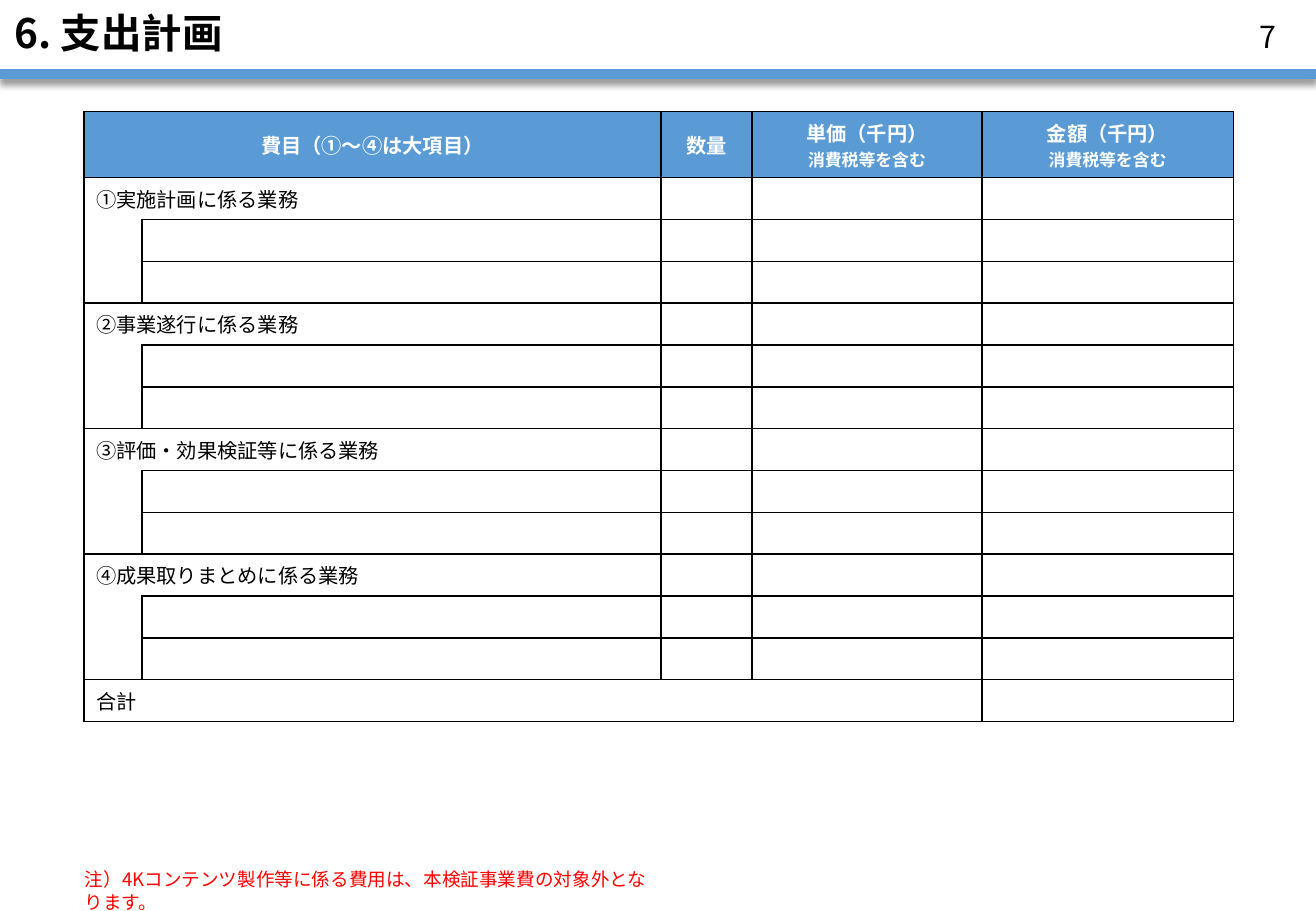
from lxml.etree import SubElement
from pptx import Presentation
from pptx.dml.color import RGBColor
from pptx.enum.shapes import MSO_CONNECTOR, MSO_SHAPE
from pptx.enum.text import MSO_ANCHOR, PP_ALIGN
from pptx.oxml.ns import qn
from pptx.util import Inches, Pt

TITLE = "6. 支出計画"
PAGE = "7"
HEADS = ["費目（①～④は大項目）", "", "数量",
         "単価（千円）\n消費税等を含む", "金額（千円）\n消費税等を含む"]
GROUPS = ["①実施計画に係る業務", "②事業遂行に係る業務",
          "③評価・効果検証等に係る業務", "④成果取りまとめに係る業務"]
TOTAL = "合計"
NOTE = "注）4Kコンテンツ製作等に係る費用は、本検証事業費の対象外となります。"
COLS = [0.48, 4.27, 0.75, 1.89, 2.07]
HEAD_H, BODY_H = 0.54, 4.48
STEP = 3
COLORS = {"blue": "5B9BD5", "black": "000000", "white": "FFFFFF", "red": "FF0000"}
FONT = "Noto Sans CJK JP"
WIDE, HIGH = 10.83, 7.5


def rgb(name):
    return RGBColor.from_string(COLORS[name])


def put(frame, text, sizes=(12,), color="black", bold=False, align=PP_ALIGN.LEFT):
    """Fill a text frame, one paragraph per line, with one size for each."""
    for i, line in enumerate(text.split("\n")):
        para = frame.paragraphs[0] if i == 0 else frame.add_paragraph()
        para.alignment = align
        if not line:
            para._p.get_or_add_endParaRPr().set("sz", str(sizes[i] * 100))
            continue
        run = para.add_run()
        run.text = line
        font = run.font
        font.name, font.size, font.bold = FONT, Pt(sizes[i]), bold
        font.color.rgb = rgb(color)
        SubElement(run._r.get_or_add_rPr(), qn("a:ea"), typeface=FONT)


def edge(cell, sides):
    props = cell._tc.get_or_add_tcPr()
    for side in "LRTB":
        line = SubElement(props, qn("a:ln" + side), w=str(Pt(1)))
        if side in sides:
            fill = SubElement(line, qn("a:solidFill"))
            SubElement(fill, qn("a:srgbClr"), val=COLORS["black"])
        else:
            SubElement(line, qn("a:noFill"))


def add_bar(slide):
    y = Inches(0.61)
    bar = slide.shapes.add_connector(MSO_CONNECTOR.STRAIGHT, 0, y, Inches(WIDE), y)
    bar.line.color.rgb = rgb("blue")
    bar.line.width = Pt(6)
    glow = SubElement(bar._element.spPr, qn("a:effectLst"))
    shade = SubElement(glow, qn("a:outerShdw"), blurRad=str(Pt(4)), dist=str(Pt(3)),
                       dir="5400000", algn="t", rotWithShape="0")
    tone = SubElement(shade, qn("a:srgbClr"), val=COLORS["black"])
    SubElement(tone, qn("a:alpha"), val="40000")


def add_title(slide):
    title = slide.shapes.title
    title.left = title.top = 0
    title.width, title.height = Inches(WIDE), Inches(0.59)
    frame = title.text_frame
    frame.margin_left = frame.margin_right = Inches(0.12)
    frame.margin_top = frame.margin_bottom = Inches(0.04)
    frame.vertical_anchor = MSO_ANCHOR.MIDDLE
    put(frame, TITLE, sizes=(24,), bold=True)
    frame.paragraphs[0].line_spacing = 0.9


def add_page(slide):
    box = slide.shapes.add_shape(MSO_SHAPE.RECTANGLE, Inches(10.24), Inches(0.14),
                                 Inches(0.39), Inches(0.31))
    box.shadow.inherit = False
    box.fill.solid()
    box.fill.fore_color.rgb = rgb("white")
    box.line.fill.background()
    frame = box.text_frame
    frame.margin_left = frame.margin_right = 0
    frame.vertical_anchor = MSO_ANCHOR.MIDDLE
    put(frame, PAGE, sizes=(18,), align=PP_ALIGN.CENTER)


def add_costs(slide):
    body = []
    for group in GROUPS:
        body += [group] + [""] * (STEP - 1)
    body.append(TOTAL)
    last = len(body)
    table = slide.shapes.add_table(last + 1, len(COLS), Inches(0.69), Inches(0.92),
                                   Inches(sum(COLS)), Inches(HEAD_H + BODY_H)).table
    table.first_row = table.horz_banding = False
    for col, width in zip(table.columns, COLS):
        col.width = Inches(width)
    for r, row in enumerate(table.rows):
        row.height = Inches(BODY_H / last if r else HEAD_H)
        for c, cell in enumerate(row.cells):
            spot = (r - 1) % STEP
            inner = r not in (0, last) and c == 0 and spot > 0
            edge(cell, ("LRB" if spot == STEP - 1 else "LR") if inner else "LRTB")
            cell.fill.solid()
            cell.fill.fore_color.rgb = rgb("white" if r else "blue")
            if r == 0:
                cell.vertical_anchor = MSO_ANCHOR.MIDDLE
                put(cell.text_frame, HEADS[c], sizes=(12, 10), color="white",
                    bold=True, align=PP_ALIGN.CENTER)
            else:
                put(cell.text_frame, "" if c else body[r - 1], align=PP_ALIGN.JUSTIFY)
    for r in [0, *range(1, last, STEP)]:
        table.cell(r, 0).merge(table.cell(r, 1))
    table.cell(last, 0).merge(table.cell(last, 3))


def add_note(slide):
    note = slide.shapes.add_textbox(Inches(0.6), Inches(7.1), Inches(4.86), Inches(0.29))
    note.text_frame.word_wrap = True
    put(note.text_frame, NOTE, sizes=(11,), color="red")


def main():
    deck = Presentation()
    deck.slide_width, deck.slide_height = Inches(WIDE), Inches(HIGH)
    slide = deck.slides.add_slide(deck.slide_layouts[5])
    for add in (add_bar, add_title, add_page, add_costs, add_note):
        add(slide)
    deck.save("out.pptx")


if __name__ == "__main__":
    main()
